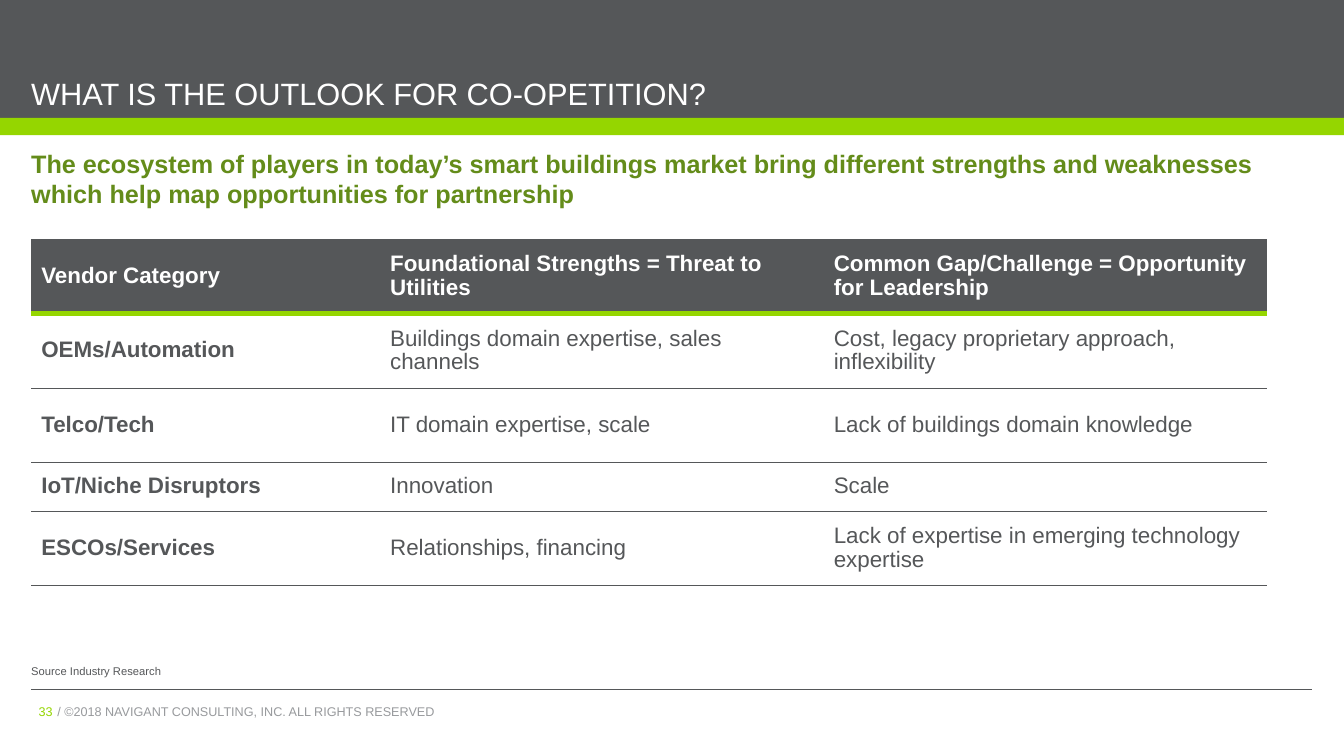
from lxml import etree
from pptx import Presentation
from pptx.dml.color import RGBColor
from pptx.enum.shapes import MSO_CONNECTOR, MSO_SHAPE
from pptx.enum.text import MSO_ANCHOR, PP_ALIGN
from pptx.oxml.ns import qn
from pptx.util import Inches, Pt

LEFT, RIGHT = PP_ALIGN.LEFT, PP_ALIGN.RIGHT
TOP, MIDDLE, BOTTOM = MSO_ANCHOR.TOP, MSO_ANCHOR.MIDDLE, MSO_ANCHOR.BOTTOM
COLORS = {"gray": "555759", "lime": "95D600", "green": "648C1A",
          "silver": "989A9D", "white": "FFFFFF"}
NO_STYLE = "{2D5ABB26-0587-4C30-8999-92F81FD0307C}"


def format_text(tf, text, size, color, bold=False, align=LEFT, spacing=1.0):
    tf.word_wrap = True
    tf.text = text
    p = tf.paragraphs[0]
    p.alignment = align
    p.line_spacing = spacing
    font = p.runs[0].font
    font.name, font.size, font.bold = "Arial", Pt(size), bold
    font.color.rgb = RGBColor.from_string(COLORS[color])


def add_border(cell, side, color, width):
    ln = etree.SubElement(cell._tc.get_or_add_tcPr(), qn(f"a:{side}"), w=str(Pt(width)))
    fill = etree.SubElement(ln, qn("a:solidFill"))
    etree.SubElement(fill, qn("a:srgbClr"), val=COLORS[color])


prs = Presentation()
prs.slide_width, prs.slide_height = Inches(13.33), Inches(7.5)
s = prs.slides.add_slide(prs.slide_layouts[6])

# Header bands
for top, height, color in [(0, 1.17, "gray"), (1.17, 0.17, "lime")]:
    sp = s.shapes.add_shape(MSO_SHAPE.RECTANGLE, 0, Inches(top), prs.slide_width, Inches(height))
    sp.shadow.inherit = False
    sp.fill.solid()
    sp.fill.fore_color.rgb = RGBColor.from_string(COLORS[color])
    sp.line.fill.background()

# Footer rule
rule = s.shapes.add_connector(MSO_CONNECTOR.STRAIGHT, Inches(0.31), Inches(6.84),
                              Inches(13.01), Inches(6.84))
rule.line.color.rgb = RGBColor.from_string(COLORS["gray"])
rule.line.width = Pt(0.75)
etree.SubElement(rule._element.spPr, qn("a:effectLst"))

# Title, subtitle and source, all without margins
texts = [
    (0, 12.7, 1.11, BOTTOM, "WHAT IS THE OUTLOOK FOR CO-OPETITION?", 22, "white", False),
    (1.47, 12.7, 0.6, TOP, "The ecosystem of players in today’s smart buildings market bring "
     "different strengths and weaknesses which help map opportunities for partnership",
     18, "green", True),
    (6.59, 3, 0.13, BOTTOM, "Source Industry Research", 8, "gray", False),
]
for top, width, height, anchor, text, size, color, bold in texts:
    tf = s.shapes.add_textbox(Inches(0.31), Inches(top), Inches(width), Inches(height)).text_frame
    tf.margin_left = tf.margin_right = tf.margin_top = tf.margin_bottom = 0
    tf.vertical_anchor = anchor
    format_text(tf, text, size, color, bold)

# Page number and copyright line
footers = [
    (0.18, 0.44, "33", "lime", RIGHT),
    (0.47, 6.37, "/ ©2018 NAVIGANT CONSULTING, INC. ALL RIGHTS RESERVED", "silver", LEFT),
]
for left, width, text, color, align in footers:
    tb = s.shapes.add_textbox(Inches(left), Inches(6.96), Inches(width), Inches(0.22))
    format_text(tb.text_frame, text, 9, color, align=align, spacing=0.86)

# Vendor table
rows = [
    ("Vendor Category", "Foundational Strengths = Threat to Utilities",
     "Common Gap/Challenge = Opportunity for Leadership"),
    ("OEMs/Automation", "Buildings domain expertise, sales channels",
     "Cost, legacy proprietary approach, inflexibility"),
    ("Telco/Tech", "IT domain expertise, scale", "Lack of buildings domain knowledge"),
    ("IoT/Niche Disruptors", "Innovation", "Scale"),
    ("ESCOs/Services", "Relationships, financing",
     "Lack of expertise in emerging technology expertise"),
]
col_widths = [3.46, 4.4, 4.4]
row_heights = [0.74, 0.74, 0.74, 0.48, 0.74]
table = s.shapes.add_table(len(rows), len(col_widths), Inches(0.31), Inches(2.37),
                           Inches(sum(col_widths)), Inches(sum(row_heights))).table
table.horz_banding = False
table._tbl.tblPr.find(qn("a:tableStyleId")).text = NO_STYLE
for column, width in zip(table.columns, col_widths):
    column.width = Inches(width)

for i, (row, height) in enumerate(zip(rows, row_heights)):
    table.rows[i].height = Inches(height)
    header = i == 0
    top_border = ("lime", 4.5) if i == 1 else ("gray", 0.25)
    bottom_border = ("lime", 4.5) if header else ("gray", 0.25)
    for j, text in enumerate(row):
        cell = table.cell(i, j)
        cell.vertical_anchor = MIDDLE
        format_text(cell.text_frame, text, 16, "white" if header else "gray",
                    bold=header or j == 0, spacing=0.95)
        add_border(cell, "lnT", *top_border)
        add_border(cell, "lnB", *bottom_border)
        if header:
            cell.fill.solid()
            cell.fill.fore_color.rgb = RGBColor.from_string(COLORS["gray"])
        else:
            cell.fill.background()

prs.save("out.pptx")
